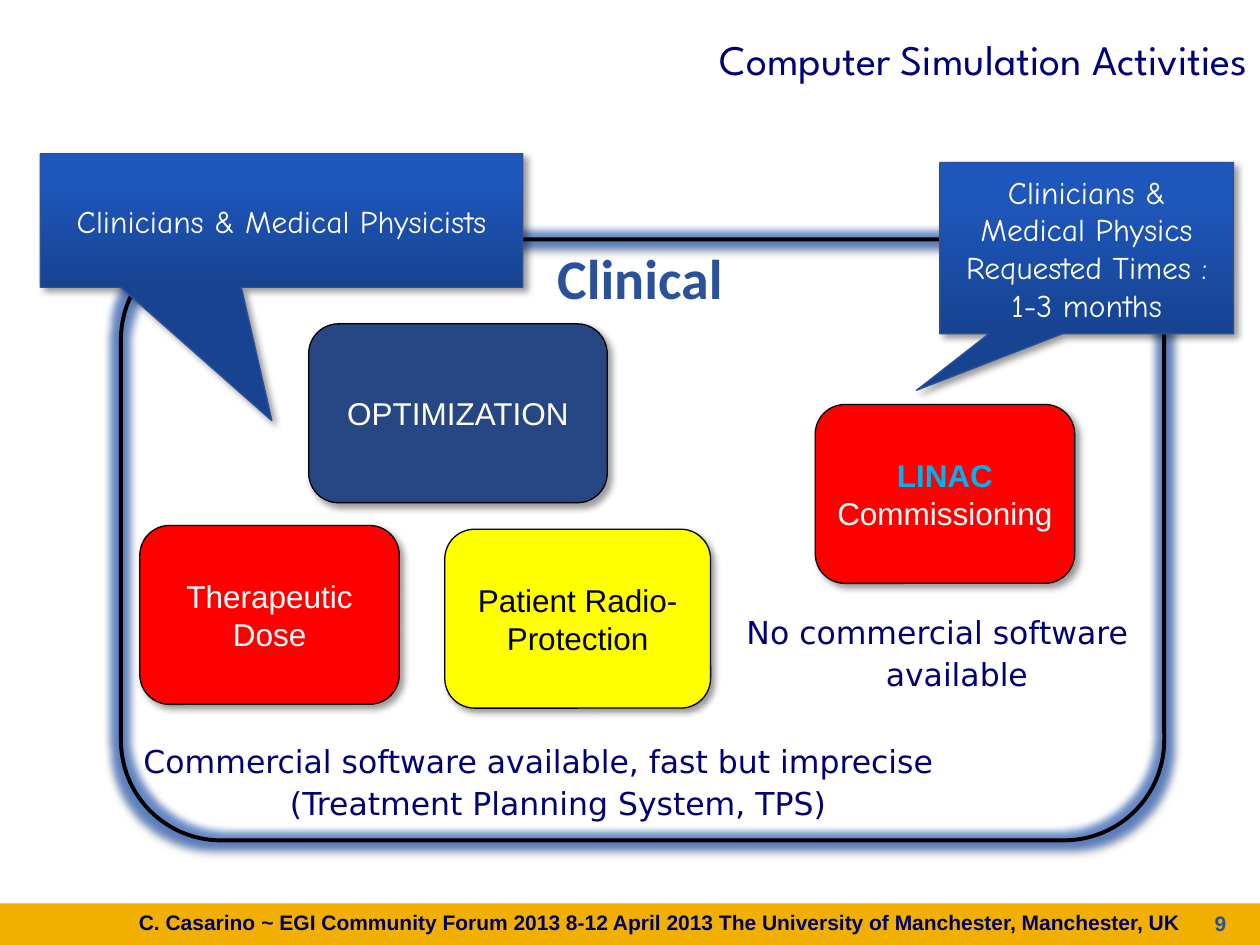
from lxml import etree
from pptx import Presentation
from pptx import util as u
from pptx.dml.color import RGBColor
from pptx.enum import shapes, text
from pptx.oxml import ns

WHITE = RGBColor(0xFF, 0xFF, 0xFF)
BLACK = RGBColor(0, 0, 0)
RED = RGBColor(0xFF, 0, 0)
YELLOW = RGBColor(0xFF, 0xFF, 0)
GOLD = RGBColor(0xF1, 0xAF, 0)
CYAN = RGBColor(0, 0xB0, 0xF0)
STEEL = RGBColor(0x26, 0x47, 0x83)
BLUE = RGBColor(0x2B, 0x51, 0x9A)
GLOW = RGBColor(0x1E, 0x57, 0xBC)
DEEP = RGBColor(0x17, 0x43, 0x91)
NAVY = RGBColor(0, 0, 0x7A)
INK = RGBColor(0, 0, 0x74)
DARK = RGBColor(0, 0, 0x60)
KIND = shapes.MSO_SHAPE
ALIGN = text.PP_ALIGN
MID = text.MSO_ANCHOR.MIDDLE


class Deck:
    """Holds the style and the current slide, and draws each kind of element."""

    def __init__(self):
        self.prs = Presentation()
        self.prs.slide_width, self.prs.slide_height = u.Inches(10), u.Inches(7.5)
        self.slide = self.prs.slides.add_slide(self.prs.slide_layouts[6])
        self.size = 18

    def style(self, font, face, color, size=None, bold=False):
        font.name, font.size, font.bold = face, u.Pt(size or self.size), bold
        font.color.rgb = color

    def effect(self, shape, tag, color, alpha, **attrs):
        effects = shape._element.spPr.find(ns.qn("a:effectLst"))
        node = etree.SubElement(effects, ns.qn(tag), {k: str(v) for k, v in attrs.items()})
        tint = etree.SubElement(node, ns.qn("a:srgbClr"), val=str(color))
        etree.SubElement(tint, ns.qn("a:alpha"), val=str(alpha * 1000))

    def shade(self, shape, alpha=40, blur=4, dist=3, angle=45):
        self.effect(shape, "a:outerShdw", BLACK, alpha, blurRad=u.Pt(blur),
                    dist=u.Pt(dist), dir=angle * 60000, rotWithShape=0)

    def shape(self, kind, at, fill=None, line=None, width=0.75):
        shape = self.slide.shapes.add_shape(kind, *map(u.Inches, at))
        shape.shadow.inherit = False
        if fill is None:
            shape.fill.background()
        else:
            shape.fill.solid()
            shape.fill.fore_color.rgb = fill
        if line is None:
            shape.line.fill.background()
        else:
            shape.line.color.rgb, shape.line.width = line, u.Pt(width)
        return shape

    def label(self, shape, lines, face):
        frame = shape.text_frame
        frame.word_wrap, frame.vertical_anchor = True, MID
        for i, (words, color, bold) in enumerate(lines):
            para = frame.add_paragraph() if i else frame.paragraphs[0]
            para.text, para.alignment = words, ALIGN.CENTER
            self.style(para.font, face, color, bold=bold)

    def card(self, at, fill, *lines):
        card = self.shape(KIND.ROUNDED_RECTANGLE, at, fill, BLACK)
        self.shade(card)
        self.label(card, lines, "Arial")

    def border(self, at):
        border = self.shape(KIND.ROUNDED_RECTANGLE, at, line=BLACK, width=2.25)
        self.effect(border, "a:glow", GLOW, 60, rad=u.Pt(8))
        self.shade(border, 35, 3.1, 1.8, 90)

    def callout(self, at, tip, words):
        call = self.shape(KIND.RECTANGULAR_CALLOUT, at, line=BLUE)
        call.adjustments[0], call.adjustments[1] = tip
        call.fill.gradient()
        call.fill.gradient_angle = 90
        for stop, color, place in zip(call.fill.gradient_stops, (DEEP, GLOW), (0, 0.8)):
            stop.color.rgb, stop.position = color, place
        self.shade(call)
        self.label(call, [(words, WHITE, False)], "Comic Neue")

    def words(self, at, runs, face, color, size=None, bold=False, align=ALIGN.RIGHT):
        frame = self.slide.shapes.add_textbox(*map(u.Inches, at)).text_frame
        frame.word_wrap = True
        para = frame.paragraphs[0]
        para.alignment = align
        for words, tint in runs:
            run = para.add_run()
            run.text = words
            if tint:
                run.font.color.rgb = tint
        self.style(para.font, face, color, size, bold)
        return frame

    def note(self, at, words):
        para = self.words(at, [(words, None)], "DejaVu Sans", INK, align=ALIGN.CENTER).paragraphs[0]
        para.line_spacing = 1.1
        props = para._p.get_or_add_pPr()
        props.set("marL", str(u.Inches(0.31)))
        props.set("indent", str(u.Inches(-0.31)))


def main():
    deck = Deck()
    deck.shape(KIND.RECTANGLE, (0, 7.17, 10, 0.33), GOLD)
    deck.words((9.32, 7.18, 0.51, 0.52), [("9", None)], "Arial", BLUE, 12, True)
    title = deck.words((1.25, 0.09, 8.75, 0.75), [("Computer Simulation Activities", None)],
                       "League Spartan", NAVY, 24)
    title.vertical_anchor = MID

    deck.card((1.11, 4.17, 2.06, 1.42), RED, ("Therapeutic Dose", WHITE, False))
    deck.card((2.45, 2.57, 2.37, 1.42), STEEL, ("OPTIMIZATION", WHITE, False))
    deck.card((3.53, 4.2, 2.11, 1.42), YELLOW, ("Patient Radio-Protection", BLACK, False))
    deck.border((0.96, 1.9, 8.28, 4.77))
    deck.words((2.43, 1.88, 5.3, 0.64), [("Clinical", None)], "Calibri", BLUE, 32, True, ALIGN.CENTER)
    deck.card((6.47, 3.21, 2.06, 1.42), RED, ("LINAC", CYAN, True), ("Commissioning", WHITE, False))

    deck.note((0.94, 5.81, 6.67, 0.9),
              "Commercial software available, fast but imprecise (Treatment Planning System, TPS)")
    deck.note((5.31, 4.79, 4.26, 0.9), "No commercial software available")
    deck.callout((0.32, 1.22, 3.83, 1.06), (-0.02, 1.5), "Clinicians & Medical Physicists")
    deck.callout((7.46, 1.29, 2.33, 1.36), (-0.58, 0.83),
                 "Clinicians & Medical Physics Requested Times : 1-3 months")
    deck.words((0.5, 7.17, 8.97, 0.52),
               [("C. Casarino ", None), ("~ ", NAVY),
                ("EGI Community Forum 2013 8-12 April 2013 The University of Manchester, Manchester, UK", None)],
               "Arial", DARK, 12, True)
    deck.prs.save("out.pptx")


if __name__ == "__main__":
    main()
